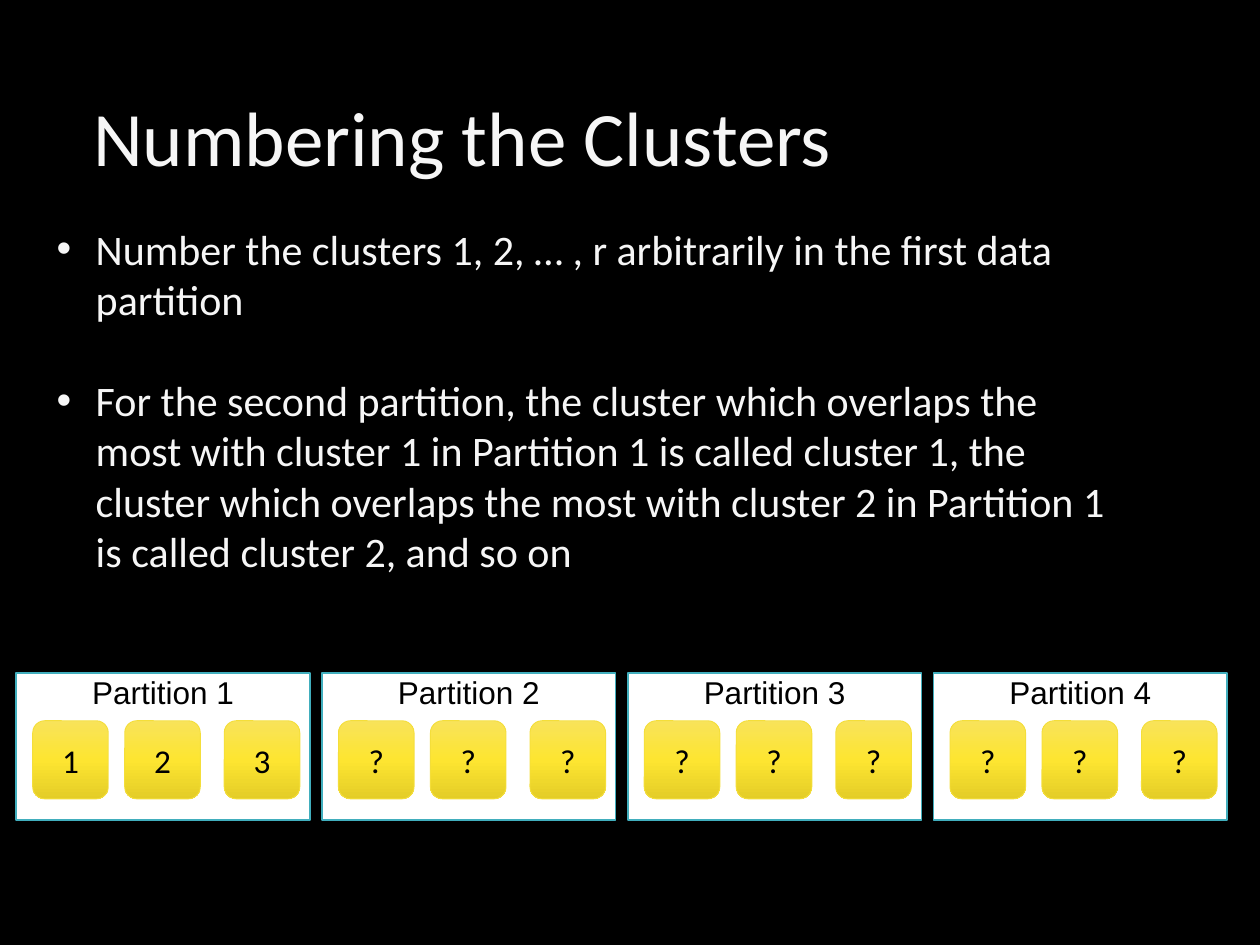
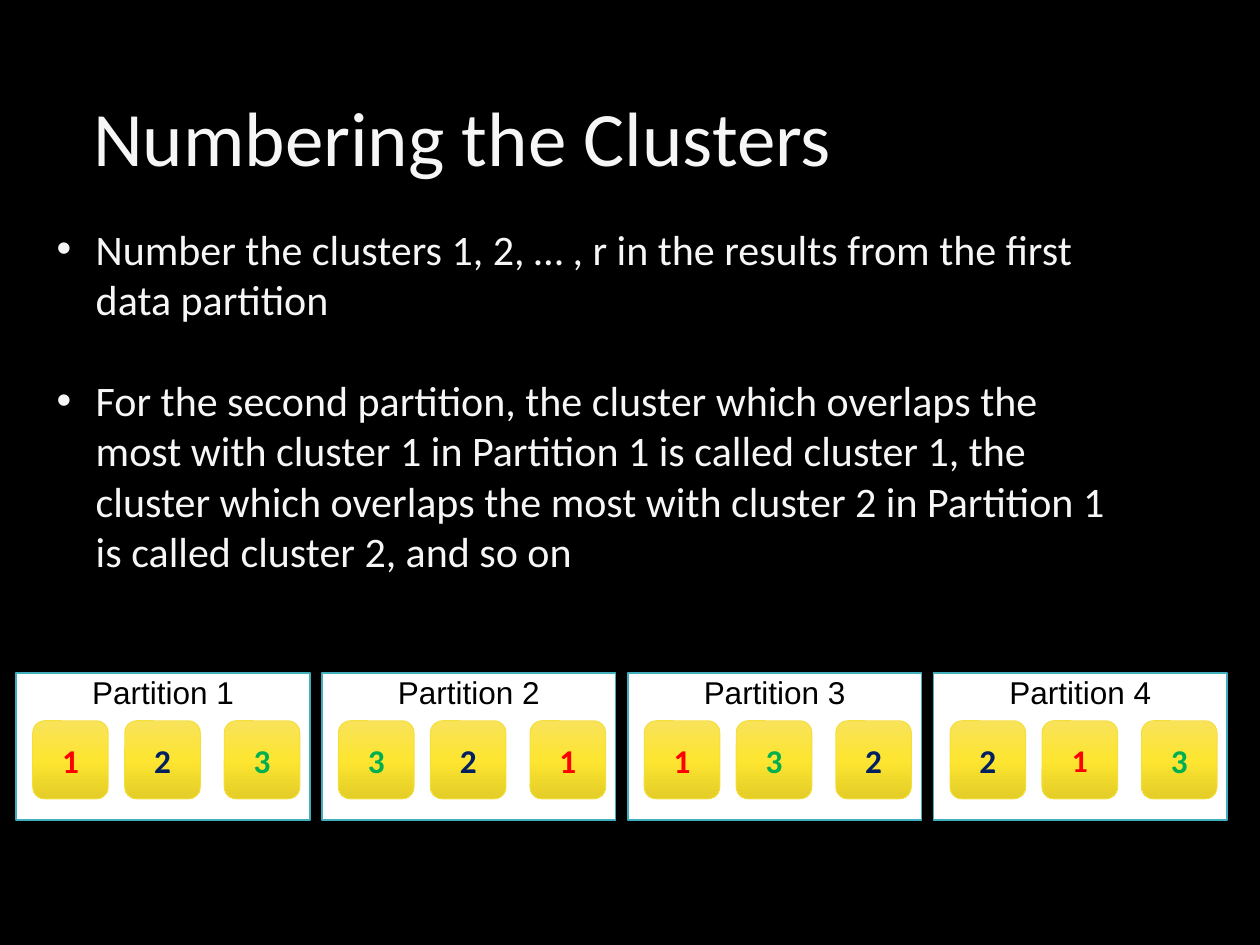
from copy import deepcopy
from dataclasses import dataclass

from pptx import Presentation
from pptx.dml.color import RGBColor as RGB
from pptx.enum.shapes import MSO_SHAPE as SHAPE
from pptx.enum.text import MSO_ANCHOR as ANCHOR, MSO_AUTO_SIZE as AUTO_SIZE, PP_ALIGN as ALIGN
from pptx.oxml.ns import qn
from pptx.oxml.xmlchemy import OxmlElement
from pptx.util import Inches, Pt


@dataclass(frozen=True)
class Theme:
    background: str = "000000"
    light_text: str = "F6F6F6"
    dark_text: str = "000000"
    partition_fill: str = "FFFFFF"
    partition_line: str = "41AEBD"
    tile_gradient: tuple = ((0, "F8E35A"), (0.5, "FDE531"), (1, "E4CD27"))
    tile_line: str = "F4DE3A"
    main_font: str = "Calibri"
    partition_font: str = "Arial"
    title_size: float = 44
    body_size: float = 24
    partition_size: float = 18
    tile_size: float = 19
    small_tile_size: float = 18


THEME = Theme()
CLUSTER_COLORS = {"1": "FF0000", "2": "002060", "3": "00B050"}

# Partition row, in inches
FIRST_LEFT, LAST_LEFT = 0.13, 7.41
PARTITION_TOP, PARTITION_WIDTH, PARTITION_HEIGHT = 5.34, 2.33, 1.17
TILE_OFFSETS = (0.13, 0.86, 1.65)
TILE_TOP, TILE_WIDTH, TILE_HEIGHT = 5.72, 0.6, 0.62

TITLE = "Numbering the Clusters"
MATCHING_RULE = (
    "For the second partition, the cluster which overlaps the most with cluster 1 "
    "in Partition 1 is called cluster 1, the cluster which overlaps the most with "
    "cluster 2 in Partition 1 is called cluster 2, and so on"
)
FIRST_RULE_UNMATCHED = "Number the clusters 1, 2, … , r arbitrarily in the first data partition"
FIRST_RULE_MATCHED = "Number the clusters 1, 2, … , r in the results from the first data partition"


def add_run(paragraph, text, size, color, font_name=THEME.main_font, bold=False):
    run = paragraph.add_run()
    run.text = text
    font = run.font
    font.name, font.size, font.bold = font_name, Pt(size), bold
    font.color.rgb = RGB.from_string(color)
    return run


def set_frame(frame, anchor, inset):
    frame.word_wrap = True
    frame.auto_size = AUTO_SIZE.NONE
    frame.vertical_anchor = anchor
    frame.margin_left = frame.margin_right = Inches(inset)
    frame.margin_top = frame.margin_bottom = Inches(inset)


def place(shape, left, top, width, height):
    shape.left, shape.top = Inches(left), Inches(top)
    shape.width, shape.height = Inches(width), Inches(height)


def set_title(slide, text):
    title = slide.shapes.title
    place(title, 0.69, 0.25, 8.62, 1.74)
    set_frame(title.text_frame, ANCHOR.MIDDLE, 0.05)
    paragraph = title.text_frame.paragraphs[0]
    paragraph.alignment = ALIGN.LEFT
    paragraph.line_spacing = 0.9
    add_run(paragraph, text, THEME.title_size, THEME.light_text)


def set_bullet(paragraph):
    properties = paragraph._p.get_or_add_pPr()
    properties.set("marL", str(Inches(0.31)))
    properties.set("indent", str(Inches(-0.31)))
    bullet = OxmlElement("a:buChar")
    bullet.set("char", "•")
    properties.append(bullet)


def set_bullets(slide, texts):
    body = slide.placeholders[1]
    place(body, 0.4, 1.72, 8.49, 3.08)
    frame = body.text_frame
    set_frame(frame, ANCHOR.TOP, 0.05)
    for index, text in enumerate(texts):
        paragraph = frame.add_paragraph() if index else frame.paragraphs[0]
        set_bullet(paragraph)
        paragraph.space_before = Pt(29 if index else 0)
        add_run(paragraph, text, THEME.body_size, THEME.light_text)


def add_box(slide, kind, bounds, line_color, line_width, anchor):
    """Add an outlined shape and return it with its centred paragraph."""
    shape = slide.shapes.add_shape(kind, *map(Inches, bounds))
    shape.shadow.inherit = False
    shape.line.color.rgb = RGB.from_string(line_color)
    shape.line.width = Pt(line_width)
    set_frame(shape.text_frame, anchor, 0)
    paragraph = shape.text_frame.paragraphs[0]
    paragraph.alignment = ALIGN.CENTER
    return shape, paragraph


def fill_gradient(shape, stops):
    fill = shape.fill
    fill.gradient()
    fill.gradient_angle = 270
    stop_list = shape.element.spPr.find(qn("a:gradFill")).find(qn("a:gsLst"))
    while len(stop_list) < len(stops):
        stop_list.append(deepcopy(stop_list[0]))
    for stop, (position, color) in zip(fill.gradient_stops, stops):
        stop.position = position
        stop.color.rgb = RGB.from_string(color)


def add_tile(slide, left, label, colored):
    tile, paragraph = add_box(
        slide, SHAPE.ROUNDED_RECTANGLE, (left, TILE_TOP, TILE_WIDTH, TILE_HEIGHT),
        THEME.tile_line, 0.5, ANCHOR.MIDDLE)
    tile.adjustments[0] = 0.16
    fill_gradient(tile, THEME.tile_gradient)
    color = CLUSTER_COLORS[label] if colored else THEME.dark_text
    return add_run(paragraph, label, THEME.tile_size, color, bold=colored)


def add_partition(slide, left, name, labels, colored):
    """Draw one partition and return the text runs of its cluster tiles."""
    box, paragraph = add_box(
        slide, SHAPE.RECTANGLE, (left, PARTITION_TOP, PARTITION_WIDTH, PARTITION_HEIGHT),
        THEME.partition_line, 1, ANCHOR.TOP)
    box.fill.solid()
    box.fill.fore_color.rgb = RGB.from_string(THEME.partition_fill)
    add_run(paragraph, name, THEME.partition_size, THEME.dark_text, THEME.partition_font)
    return [add_tile(slide, left + offset, label, colored)
            for offset, label in zip(TILE_OFFSETS, labels)]


def add_cluster_slide(presentation, first_rule, partitions, colored):
    slide = presentation.slides.add_slide(presentation.slide_layouts[1])
    set_title(slide, TITLE)
    set_bullets(slide, (first_rule, MATCHING_RULE))
    pitch = (LAST_LEFT - FIRST_LEFT) / (len(partitions) - 1)
    return [add_partition(slide, FIRST_LEFT + index * pitch, f"Partition {index + 1}",
                          labels, colored)
            for index, labels in enumerate(partitions)]


def main():
    presentation = Presentation()
    presentation.slide_width, presentation.slide_height = Inches(10), Inches(7.5)

    # Shared background
    background = presentation.slide_master.background.fill
    background.solid()
    background.fore_color.rgb = RGB.from_string(THEME.background)

    # Clusters before matching
    add_cluster_slide(presentation, FIRST_RULE_UNMATCHED, ("123", "???", "???", "???"), False)

    # Clusters after matching; one label is slightly smaller
    label_runs = add_cluster_slide(
        presentation, FIRST_RULE_MATCHED, ("123", "321", "132", "213"), True)
    label_runs[3][1].font.size = Pt(THEME.small_tile_size)

    presentation.save("out.pptx")


if __name__ == "__main__":
    main()
